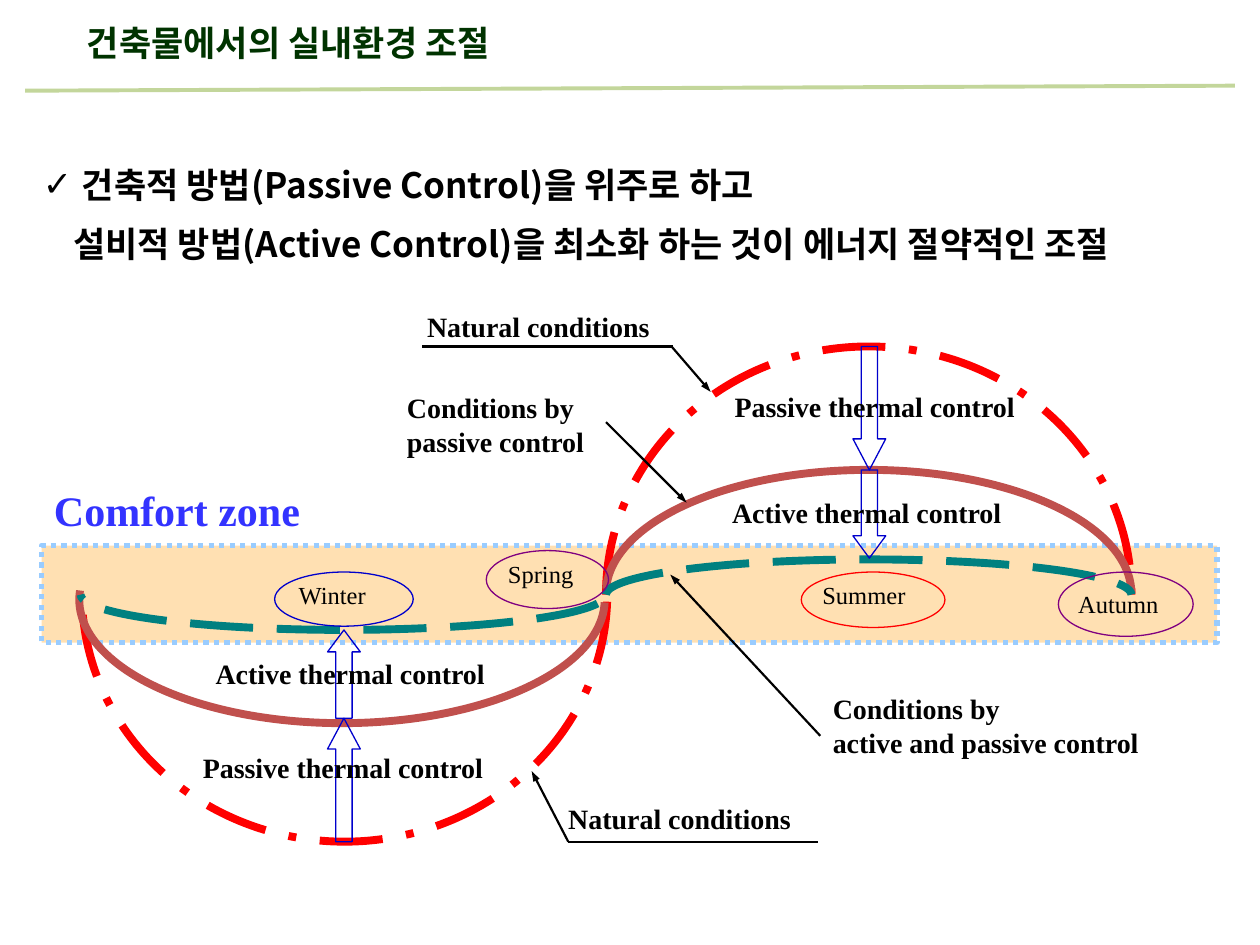
from dataclasses import dataclass
from typing import Optional

from pptx import Presentation
from pptx.dml.color import RGBColor
from pptx.enum.dml import MSO_LINE as Dash
from pptx.enum.shapes import MSO_CONNECTOR, MSO_SHAPE as Shape
from pptx.enum.text import MSO_ANCHOR as Anchor, MSO_AUTO_SIZE as AutoSize, PP_ALIGN as Align
from pptx.oxml.ns import qn
from pptx.util import Inches, Pt


@dataclass(frozen=True)
class Theme:
    black: str = "000000"
    title: str = "003300"
    rule: str = "C3D69B"
    zone: str = "FF9900"
    zone_edge: str = "99CCFF"
    zone_text: str = "3333FF"
    natural: str = "FF0000"
    passive: str = "C0504D"
    active: str = "008080"
    cold: str = "0000CC"
    mild: str = "800080"
    serif: str = "Times New Roman"
    sans: str = "Noto Sans CJK KR"
    heading: int = 20
    zone_size: int = 24
    label: int = 16
    season: int = 14


@dataclass(frozen=True)
class Curve:
    left: float
    base: float
    height: float
    start: float
    end: float
    color: str
    dash: Optional[Dash] = None


@dataclass(frozen=True)
class Season:
    text: str
    box: tuple
    color: str
    indent: float = 0
    anchor: Anchor = Anchor.TOP


@dataclass(frozen=True)
class Arrow:
    shape: Shape
    left: float
    top: float
    height: float
    head: float


@dataclass(frozen=True)
class Line:
    start: tuple
    end: tuple
    arrow: bool = True


@dataclass(frozen=True)
class Label:
    text: str
    box: tuple
    align: Align = Align.JUSTIFY


T = Theme()
CURVE_WIDTH = 4.17
ANGLE_UNIT = 0.6

CURVES = [
    Curve(0.65, 4.71, 1.97, 1.8, 178.2, T.natural, Dash.LONG_DASH_DOT),
    Curve(4.81, 4.72, 1.97, 180, 0, T.natural, Dash.LONG_DASH_DOT),
    Curve(0.63, 4.76, 0.98, 0.6, 182, T.passive),
    Curve(4.81, 4.71, 0.98, 181, 0, T.passive),
    Curve(0.64, 4.72, 0.28, 2, 180, T.active, Dash.LONG_DASH),
    Curve(4.81, 4.72, 0.28, 180, 0, T.active, Dash.LONG_DASH),
]
SEASONS = [
    Season("Winter", (2.18, 4.54, 1.1, 0.43), T.cold, 0.03),
    Season("Spring", (3.86, 4.37, 0.97, 0.46), T.mild, 0.03),
    Season("Summer", (6.36, 4.54, 1.14, 0.44), T.natural),
    Season("Autumn", (8.4, 4.54, 1.07, 0.51), T.mild, anchor=Anchor.MIDDLE),
]
ARROWS = [
    Arrow(Shape.UP_ARROW, 2.6, 5.7, 0.98, 0.94),
    Arrow(Shape.UP_ARROW, 2.6, 5, 0.7, 0.67),
    Arrow(Shape.DOWN_ARROW, 6.77, 2.75, 0.98, 0.95),
    Arrow(Shape.DOWN_ARROW, 6.77, 3.73, 0.7, 0.68),
]
LINES = [
    Line((4.51, 6.68), (4.22, 6.12)),
    Line((4.51, 6.68), (6.49, 6.68), False),
    Line((4.81, 3.35), (5.45, 3.99)),
    Line((6.51, 5.84), (5.32, 4.56)),
    Line((5.33, 2.75), (5.64, 3.11)),
    Line((3.35, 2.75), (5.34, 2.75), False),
]
LABELS = [
    Label("Natural conditions", (4.51, 6.36, 2.28, 0.43)),
    Label("Passive thermal control", (1.61, 5.96, 2.47, 0.43)),
    Label("Active thermal control", (1.33, 5.21, 2.9, 0.43), Align.CENTER),
    Label("Active thermal control", (5.81, 3.93, 2.58, 0.42)),
    Label("Passive thermal control", (5.83, 3.09, 2.34, 0.43)),
    Label("Natural conditions", (3.39, 2.46, 2.5, 0.43)),
    Label("Conditions by\nactive and passive control", (6.61, 5.49, 2.64, 0.68)),
    Label("Conditions by\npassive control", (3.23, 3.1, 1.61, 0.68)),
]


def inches(values: tuple) -> list:
    return [Inches(v) for v in values]


def place(s, box: tuple) -> None:
    s.left, s.top, s.width, s.height = inches(box)


def write(s, text: str, size: int, color: str, font: str, bold: bool = True,
          align: Align = Align.LEFT, anchor: Anchor = Anchor.TOP,
          margins: tuple = (0, 0, 0, 0)) -> None:
    tf = s.text_frame
    tf.text = text
    tf.word_wrap = True
    tf.auto_size = AutoSize.NONE
    tf.vertical_anchor = anchor
    tf.margin_left, tf.margin_top, tf.margin_right, tf.margin_bottom = inches(margins)
    for p in tf.paragraphs:
        p.alignment = align
        p.space_before = Pt(0)
        for r in p.runs:
            r.font.name, r.font.size, r.font.bold = font, Pt(size), bold
            r.font.color.rgb = RGBColor.from_string(color)
            rPr = r.font._element
            rPr.set("kern", "0")
            rPr.find(qn("a:latin")).addnext(rPr.makeelement(qn("a:ea"), {"typeface": font}))


def stroke(s, color: str, width: float, dash: Optional[Dash] = None) -> None:
    s.line.color.rgb = RGBColor.from_string(color)
    s.line.width = Pt(width)
    if dash is not None:
        s.line.dash_style = dash


def add_outline(shapes, kind: Shape, box: tuple, color: str, width: float = 0.75,
                dash: Optional[Dash] = None):
    s = shapes.add_shape(kind, *inches(box))
    s.shadow.inherit = False
    s.fill.background()
    stroke(s, color, width, dash)
    return s


def add_line(shapes, line: Line, color: str = T.black, width: float = 1.25) -> None:
    s = shapes.add_connector(MSO_CONNECTOR.STRAIGHT, *inches(line.start + line.end))
    stroke(s, color, width)
    if line.arrow:
        ln = s.line._get_or_add_ln()
        ln.append(ln.makeelement(qn("a:tailEnd"), {"type": "triangle", "w": "sm", "len": "med"}))
    pr = s._element.spPr
    pr.append(pr.makeelement(qn("a:effectLst"), {}))


def add_curve(shapes, c: Curve) -> None:
    box = (c.left, c.base - c.height, CURVE_WIDTH, 2 * c.height)
    s = add_outline(shapes, Shape.ARC, box, c.color, 4.5, c.dash)
    s.adjustments[0], s.adjustments[1] = c.start * ANGLE_UNIT, c.end * ANGLE_UNIT


def add_zone(shapes) -> None:
    box = (0.33, 4.33, 9.33, 0.77)
    s = add_outline(shapes, Shape.RECTANGLE, box, T.zone_edge, 3, Dash.ROUND_DOT)
    s.fill.solid()
    s.fill.fore_color.rgb = RGBColor.from_string(T.zone)
    clr = s._element.spPr.find(qn("a:solidFill"))[0]
    clr.append(clr.makeelement(qn("a:alpha"), {"val": "30000"}))


def set_bullet(p, left: float, char: Optional[str] = None) -> None:
    pPr = p._p.get_or_add_pPr()
    pPr.set("marL", str(Inches(left)))
    pPr.set("indent", str(-Inches(left) if char else 0))
    tag, attrs = ("a:buChar", {"char": char}) if char else ("a:buNone", {})
    pPr.append(pPr.makeelement(qn(tag), attrs))


def add_headings(slide) -> None:
    title, body = slide.placeholders
    place(title, (0.59, 0.12, 7.8, 0.44))
    write(title, "건축물에서의 실내환경 조절", T.heading, T.title, T.sans,
          anchor=Anchor.MIDDLE, margins=(0.1, 0.05, 0.1, 0.05))
    place(body, (0.24, 1.23, 9.74, 0.94))
    write(body, "건축적 방법(Passive Control)을 위주로 하고\n"
          "설비적 방법(Active Control)을 최소화 하는 것이 에너지 절약적인 조절",
          T.heading, T.black, T.sans, anchor=Anchor.MIDDLE, margins=(0.1, 0.05, 0, 0.05))
    first, second = body.text_frame.paragraphs
    second.space_before = Pt(10)
    set_bullet(first, 0.31, "✓")
    set_bullet(second, 0.24)


def main() -> None:
    prs = Presentation()
    prs.slide_width, prs.slide_height = Inches(10), Inches(7.5)
    slide = prs.slides.add_slide(prs.slide_layouts[1])
    shapes = slide.shapes
    add_headings(slide)
    add_line(shapes, Line((0.2, 0.72), (9.8, 0.68), False), T.rule, 2.25)
    add_zone(shapes)
    for c in CURVES:
        add_curve(shapes, c)
    for season in SEASONS:
        s = add_outline(shapes, Shape.OVAL, season.box, season.color)
        write(s, season.text, T.season, T.black, T.serif, False, Align.JUSTIFY,
              season.anchor, (season.indent, 0, 0, 0))
    for a in ARROWS:
        s = add_outline(shapes, a.shape, (a.left, a.top, 0.26, a.height), T.cold)
        s.adjustments[0], s.adjustments[1] = 0.5, a.head
    for line in LINES:
        add_line(shapes, line)
    for label in LABELS:
        s = shapes.add_textbox(*inches(label.box))
        write(s, label.text, T.label, T.black, T.serif, align=label.align)
    s = shapes.add_textbox(*inches((0.33, 3.8, 2.33, 0.5)))
    write(s, "Comfort zone", T.zone_size, T.zone_text, T.serif, margins=(0.1, 0.05, 0.1, 0.05))
    prs.save("out.pptx")


if __name__ == "__main__":
    main()
